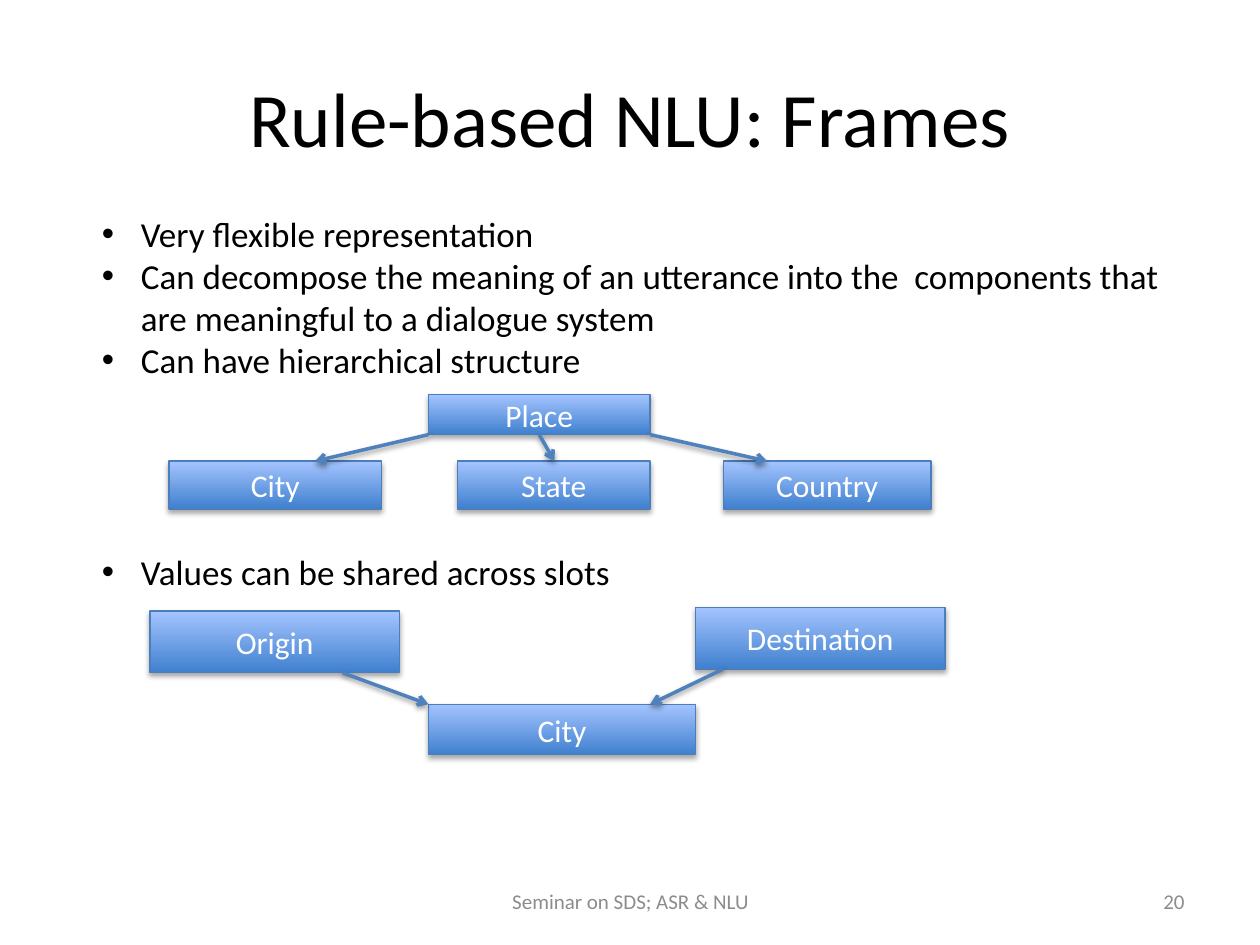
"""Build the slide on frames in rule-based language understanding."""
from lxml import etree
from pptx import Presentation
from pptx.dml.color import RGBColor
from pptx.enum import shapes, text
from pptx.oxml import ns
from pptx.util import Inches, Pt

FONT = "Calibri"
BLACK, WHITE, GRAY = "000000", "FFFFFF", "8C8C8C"
BOX_DARK, BOX_LIGHT, BOX_EDGE, ARROW = "3F80CE", "A4C4FF", "4B7EBC", "4F81BD"

TITLE = "Rule-based NLU: Frames"
BULLETS = [
    ("Very flexible representation", 0),
    ("Can decompose the meaning of an utterance into the  components that "
     "are meaningful to a dialogue system", 0),
    ("Can have hierarchical structure", 0),
    ("Values can be shared across slots", 97),
]
FOOTER, PAGE = "Seminar on SDS; ASR & NLU", "20"

PLACE = ("Place", 3.4, 3.13, 1.76, 0.32)
PARTS_TOP, PARTS_HEIGHT = 3.66, 0.38
PARTS = [("City", 1.34, 1.69, 2.5), ("State", 3.63, 1.53, 4.4),
         ("Country", 5.74, 1.65, 6.09)]
SLOTS = [("Origin", 1.19, 4.85, 1.98, 0.49),
         ("Destination", 5.52, 4.82, 1.98, 0.49)]
SHARED = ("City", 3.4, 5.59, 2.12, 0.4)
SLOT_ARROWS = [(2.72, 3.4), (5.74, 5.16)]


def color(value):
    return RGBColor.from_string(value)


def add_xml(parent, tag, **attrs):
    return etree.SubElement(parent, ns.qn(tag),
                            {k: str(v) for k, v in attrs.items()})


def add_shadow(effects, alpha, dist):
    shadow = add_xml(effects, "a:outerShdw", blurRad=Pt(3.1), dist=Pt(dist),
                     dir=90 * 60000, rotWithShape=0)
    add_xml(add_xml(shadow, "a:srgbClr", val=BLACK), "a:alpha",
            val=alpha * 1000)


def style(p, size, ink, align):
    p.alignment = align
    for r in p.runs:
        r.font.name, r.font.size = FONT, Pt(size)
        r.font.color.rgb = color(ink)


def add_text(s, content, box, size, ink, align):
    tf = s.shapes.add_textbox(*map(Inches, box)).text_frame
    tf.word_wrap = True
    tf.vertical_anchor = text.MSO_ANCHOR.MIDDLE
    tf.text = content
    style(tf.paragraphs[0], size, ink, align)


def add_box(s, label, *box):
    sp = s.shapes.add_shape(shapes.MSO_SHAPE.RECTANGLE, *map(Inches, box))
    sp.fill.gradient()
    sp.fill.gradient_angle = 90
    for stop, value in zip(sp.fill.gradient_stops, (BOX_DARK, BOX_LIGHT)):
        stop.color.rgb = color(value)
    for stop, position in zip(sp.fill.gradient_stops, (0, 1)):
        stop.position = position
    sp.line.color.rgb = color(BOX_EDGE)
    sp.line.width = Pt(0.75)
    sp.shadow.inherit = False
    add_shadow(sp.element.spPr.find(ns.qn("a:effectLst")), 35, 1.8)
    tf = sp.text_frame
    tf.vertical_anchor = text.MSO_ANCHOR.MIDDLE
    tf.text = label
    style(tf.paragraphs[0], 18, WHITE, text.PP_ALIGN.CENTER)


def add_arrow(s, *ends):
    line = s.shapes.add_connector(shapes.MSO_CONNECTOR.STRAIGHT,
                                  *map(Inches, ends))
    line.line.color.rgb = color(ARROW)
    line.line.width = Pt(2)
    add_xml(line.line._get_or_add_ln(), "a:tailEnd", type="arrow")
    add_shadow(add_xml(line._element.spPr, "a:effectLst"), 38, 1.6)


def add_bullets(s):
    box = map(Inches, (0.71, 1.64, 8.89, 3.43))
    tf = s.shapes.add_textbox(*box).text_frame
    tf.word_wrap = True
    for i, (content, gap) in enumerate(BULLETS):
        p = tf.add_paragraph() if i else tf.paragraphs[0]
        p.text = content
        if gap:
            p.space_before = Pt(gap)
        pr = p._p.get_or_add_pPr()
        pr.set("marL", str(Inches(0.31)))
        pr.set("indent", str(-Inches(0.31)))
        add_xml(pr, "a:buFont", typeface="Arial")
        add_xml(pr, "a:buChar", char="•")
        style(p, 20, BLACK, text.PP_ALIGN.LEFT)


def main():
    prs = Presentation()
    prs.slide_width, prs.slide_height = Inches(10), Inches(7.5)
    s = prs.slides.add_slide(prs.slide_layouts[6])
    center, right = text.PP_ALIGN.CENTER, text.PP_ALIGN.RIGHT
    add_text(s, TITLE, (0.5, 0.3, 9, 1.25), 44, BLACK, center)

    add_box(s, *PLACE)
    _, left, top, width, height = PLACE
    for label, x, w, _ in PARTS:
        add_box(s, label, x, PARTS_TOP, w, PARTS_HEIGHT)
    for i, (_, _, _, target) in enumerate(PARTS):
        add_arrow(s, left + i * width / 2, top + height, target, PARTS_TOP)

    for box in SLOTS + [SHARED]:
        add_box(s, *box)
    for (_, _, y, _, h), (start, end) in zip(SLOTS, SLOT_ARROWS):
        add_arrow(s, start, y + h, end, SHARED[2])

    add_bullets(s)
    add_text(s, FOOTER, (3.42, 6.95, 3.17, 0.4), 12, GRAY, center)
    add_text(s, PAGE, (7.17, 6.95, 2.33, 0.4), 12, GRAY, right)
    prs.save("out.pptx")


if __name__ == "__main__":
    main()
